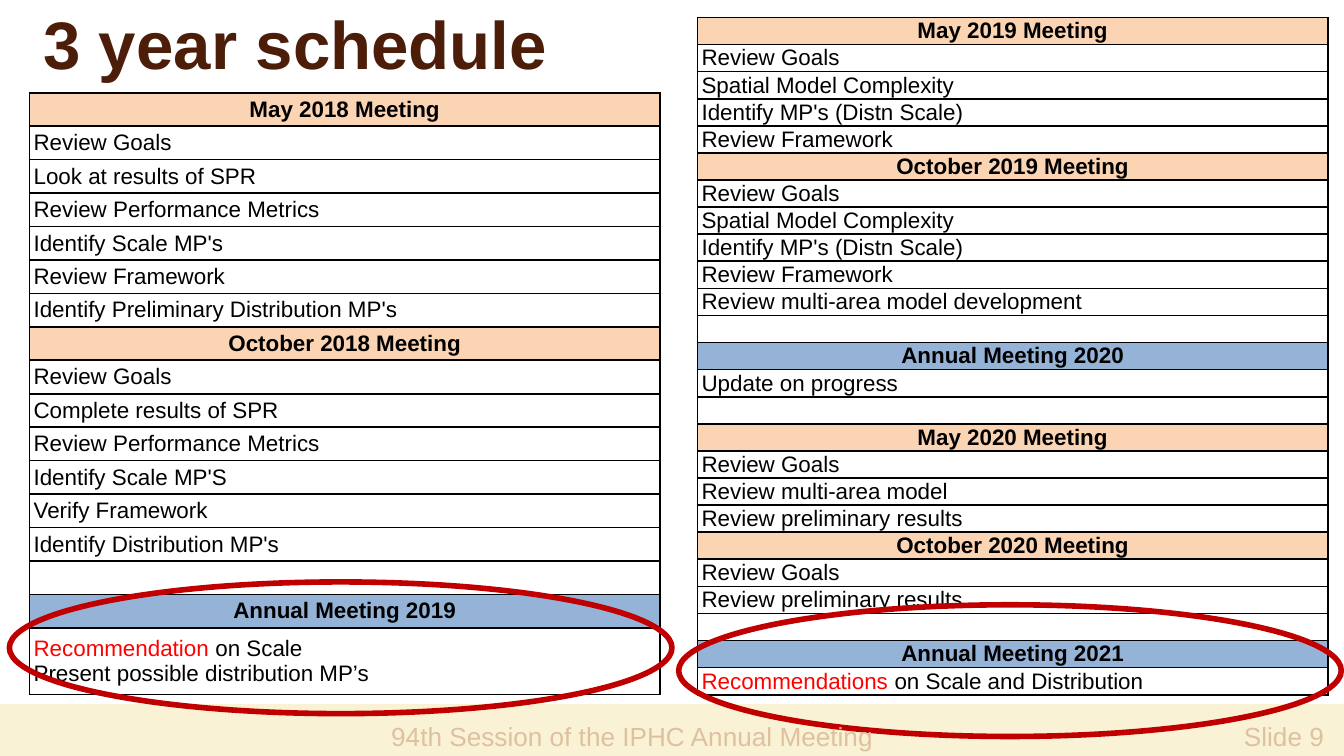
from pptx import Presentation
from pptx import util as u
from pptx.dml.color import RGBColor
from pptx.enum import shapes, text
from pptx.oxml.xmlchemy import OxmlElement

COLORS = {
    "title": "4C1D08",
    "text": "000000",
    "highlight": "FF0000",
    "interim": "FBD4B4",
    "annual": "95B3D7",
    "band": "FAF2D4",
    "footer": "DDC1A1",
    "ring": "C00000",
}
FONT = "Arial"
SLIDE_WIDTH = 10
SLIDE_HEIGHT = SLIDE_WIDTH * 9 / 16

FIRST_YEAR = [
    "May 2018 Meeting",
    "Review Goals",
    "Look at results of SPR",
    "Review Performance Metrics",
    "Identify Scale MP's",
    "Review Framework",
    "Identify Preliminary Distribution MP's",
    "October 2018 Meeting",
    "Review Goals",
    "Complete results of SPR",
    "Review Performance Metrics",
    "Identify Scale MP'S",
    "Verify Framework",
    "Identify Distribution MP's",
    "",
    "Annual Meeting 2019",
    "Recommendation on Scale\nPresent possible distribution MP’s",
]
LATER_YEARS = [
    "May 2019 Meeting",
    "Review Goals",
    "Spatial Model Complexity",
    "Identify MP's (Distn Scale)",
    "Review Framework",
    "October 2019 Meeting",
    "Review Goals",
    "Spatial Model Complexity",
    "Identify MP's (Distn Scale)",
    "Review Framework",
    "Review multi-area model development",
    "",
    "Annual Meeting 2020",
    "Update on progress",
    "",
    "May 2020 Meeting",
    "Review Goals",
    "Review multi-area model",
    "Review preliminary results",
    "October 2020 Meeting",
    "Review Goals",
    "Review preliminary results",
    "",
    "Annual Meeting 2021",
    "Recommendations on Scale and Distribution",
]


def color(name):
    return RGBColor.from_string(COLORS[name])


def inches(*lengths):
    return [u.Inches(length) for length in lengths]


def format_paragraph(paragraph, size, color_name, bold=False, align=text.PP_ALIGN.LEFT):
    paragraph.alignment = align
    font = paragraph.font
    font.name, font.size, font.bold = FONT, u.Pt(size), bold
    font.color.rgb = color(color_name)


def add_borders(cell):
    properties = cell._tc.get_or_add_tcPr()
    for side in ("a:lnL", "a:lnR", "a:lnT", "a:lnB"):
        line = OxmlElement(side)
        line.set("w", str(u.Pt(1)))
        fill = OxmlElement("a:solidFill")
        line_color = OxmlElement("a:srgbClr")
        line_color.set("val", COLORS["text"])
        fill.append(line_color)
        line.append(fill)
        properties.append(line)


def fill_cell(cell, entry):
    is_heading = "Meeting" in entry
    cell.margin_left = cell.margin_right = u.Inches(0.03)
    cell.margin_top = cell.margin_bottom = 0
    cell.vertical_anchor = text.MSO_ANCHOR.MIDDLE
    add_borders(cell)
    if is_heading:
        cell.fill.solid()
        cell.fill.fore_color.rgb = color("annual" if entry.startswith("Annual") else "interim")
    else:
        cell.fill.background()

    cell.text = entry
    align = text.PP_ALIGN.CENTER if is_heading else text.PP_ALIGN.LEFT
    for paragraph in cell.text_frame.paragraphs:
        format_paragraph(paragraph, 12, "text", is_heading, align)
        if paragraph.text.startswith("Recommendation"):
            first_word, rest = paragraph.text.split(" ", 1)
            paragraph.runs[0].text = first_word
            paragraph.runs[0].font.color.rgb = color("highlight")
            paragraph.add_run().text = " " + rest
        if not entry:
            end = OxmlElement("a:endParaRPr")
            end.set("sz", "1200")
            paragraph._p.append(end)


def add_schedule(slide, entries, left, top, width, height):
    table = slide.shapes.add_table(len(entries), 1, *inches(left, top, width, height)).table
    table.first_row = table.horz_banding = False
    line_counts = [entry.count("\n") + 1 for entry in entries]
    line_height = height / sum(line_counts)
    for row, entry, lines in zip(table.rows, entries, line_counts):
        row.height = u.Inches(line_height * lines)
        fill_cell(row.cells[0], entry)


def add_title(slide, wording, left, top, width, height):
    title = slide.shapes.title
    title.left, title.top, title.width, title.height = inches(left, top, width, height)
    title.text = wording
    title.text_frame.vertical_anchor = text.MSO_ANCHOR.MIDDLE
    format_paragraph(title.text_frame.paragraphs[0], 36, "title", True)


def add_band(slide, left, top, width, height):
    band = slide.shapes.add_shape(
        shapes.MSO_SHAPE.RECTANGLE, *inches(left, top, width, height))
    band.shadow.inherit = False
    band.fill.solid()
    band.fill.fore_color.rgb = color("band")
    band.line.fill.background()


def add_ring(slide, left, top, width, height):
    ring = slide.shapes.add_shape(shapes.MSO_SHAPE.OVAL, *inches(left, top, width, height))
    ring.shadow.inherit = False
    ring.fill.background()
    ring.line.color.rgb = color("ring")
    ring.line.width = u.Pt(3)


def add_footer_text(slide, wording, align, left, top, width, height):
    box = slide.shapes.add_textbox(*inches(left, top, width, height))
    box.text_frame.word_wrap = True
    box.text_frame.text = wording
    format_paragraph(box.text_frame.paragraphs[0], 14, "footer", align=align)


def main():
    presentation = Presentation()
    presentation.slide_width, presentation.slide_height = inches(SLIDE_WIDTH, SLIDE_HEIGHT)
    slide = presentation.slides.add_slide(presentation.slide_layouts[5])

    add_band(slide, 0, 5.24, SLIDE_WIDTH, SLIDE_HEIGHT - 5.24)
    add_title(slide, "3 year schedule", 0.22, 0.03, 9.62, 0.57)
    add_footer_text(slide, "Slide 9", text.PP_ALIGN.RIGHT, 7.62, 5.31, 2.33, 0.3)
    add_schedule(slide, FIRST_YEAR, 0.22, 0.69, 4.69, 4.48)
    add_schedule(slide, LATER_YEARS, 5.19, 0.13, 4.69, 5.04)
    add_ring(slide, 0.07, 4.33, 4.93, 0.98)
    add_ring(slide, 5.05, 4.5, 4.93, 0.98)
    add_footer_text(slide, "94th Session of the IPHC Annual Meeting",
                    text.PP_ALIGN.CENTER, 2.59, 5.31, 4.23, 0.3)

    presentation.save("out.pptx")


if __name__ == "__main__":
    main()
